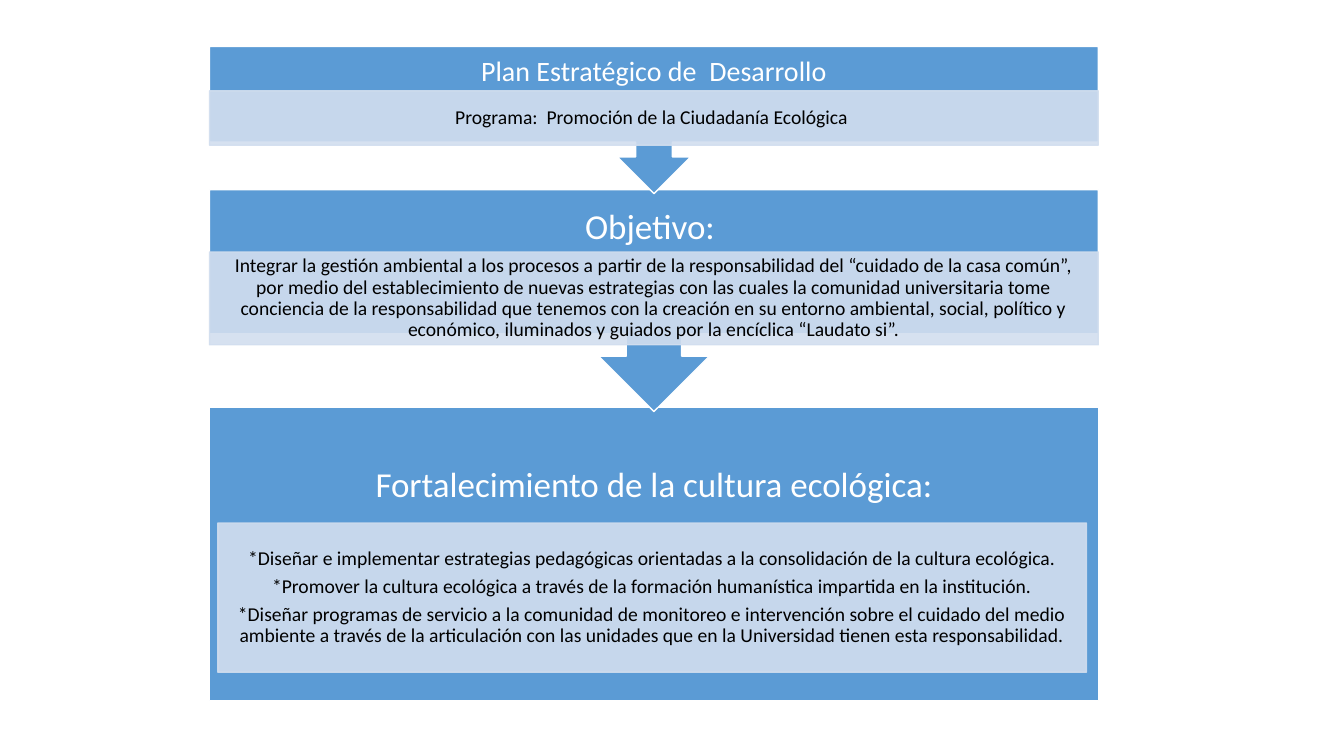
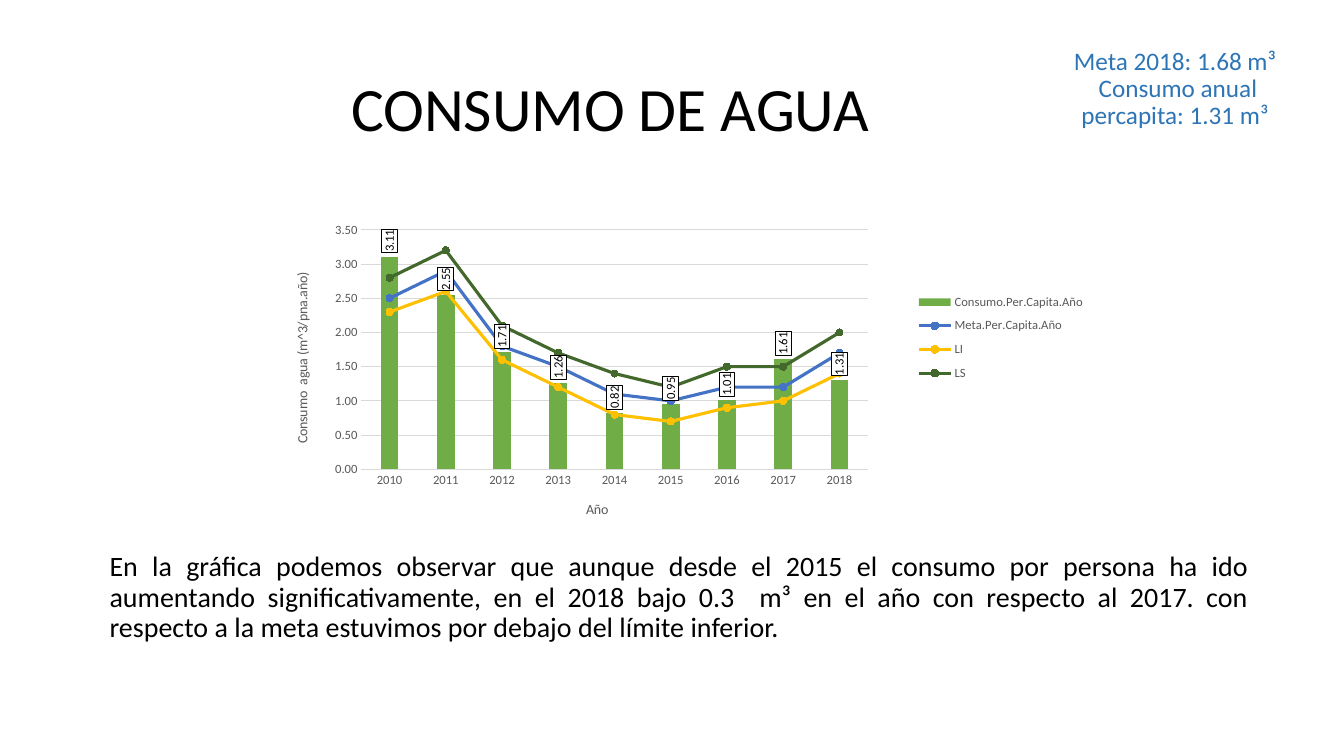
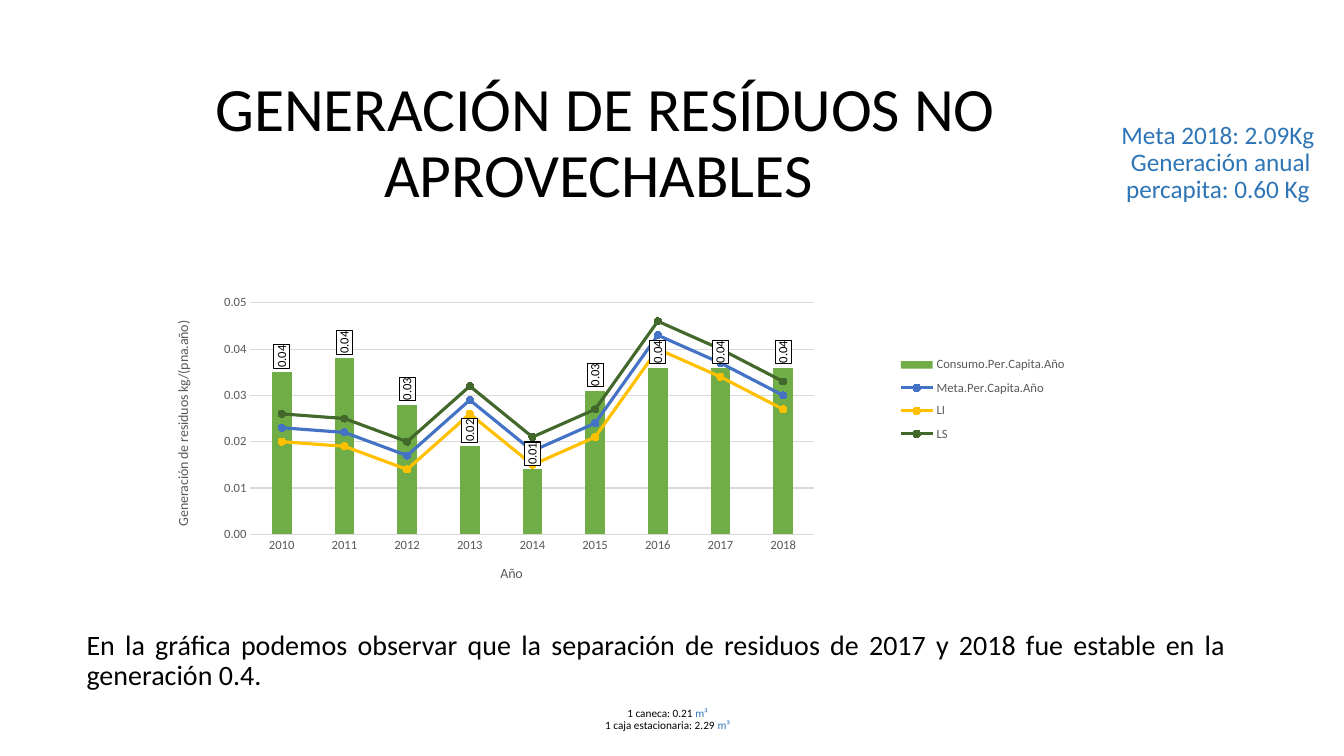
"""Builds three slides on an ecological plan, water use and waste generation."""
from copy import deepcopy

from pptx import Presentation
from pptx.chart.data import CategoryChartData
from pptx.dml.color import RGBColor
from pptx.enum.chart import XL_CHART_TYPE, XL_LABEL_POSITION, XL_LEGEND_POSITION, XL_MARKER_STYLE, XL_TICK_MARK
from pptx.enum.shapes import MSO_SHAPE
from pptx.enum.text import MSO_ANCHOR, MSO_AUTO_SIZE, PP_ALIGN
from pptx.oxml import parse_xml
from pptx.oxml.ns import nsdecls, qn
from pptx.util import Cm, Pt

COLORS = {key: RGBColor.from_string(value) for key, value in {
    "block": "5B9BD5", "band": "D2DEEF", "white": "FFFFFF", "black": "000000",
    "goal": "2E75B6", "axis": "595959", "grid": "D9D9D9", "consumption": "70AD47",
}.items()}
LINE_COLORS = {"Meta.Per.Capita.Año": "4472C4", "LI": "FFC000", "LS": "43682B"}
FONT = "Calibri"
YEARS = [str(year) for year in range(2010, 2019)]


def write(frame, paragraphs, size, color="black", align=PP_ALIGN.CENTER, anchor=MSO_ANCHOR.MIDDLE, gap=0):
    settings = {"word_wrap": True, "auto_size": MSO_AUTO_SIZE.NONE, "vertical_anchor": anchor,
                "margin_left": Cm(0.25), "margin_right": Cm(0.25),
                "margin_top": Cm(0.13), "margin_bottom": Cm(0.13)}
    for name, value in settings.items():
        setattr(frame, name, value)
    for index, words in enumerate(paragraphs):
        paragraph = frame.add_paragraph() if index else frame.paragraphs[0]
        layout = {"alignment": align, "line_spacing": 0.9, "space_before": Pt(gap if index else 0)}
        for name, value in layout.items():
            setattr(paragraph, name, value)
        run = paragraph.add_run()
        run.text = words
        run.font.name, run.font.size = FONT, Pt(size)
        run.font.color.rgb = COLORS[color]


def place(element, index, target="", **position):
    for old in element.findall(qn("c:layout")):
        element.remove(old)
    modes = "".join(f'<c:{key}Mode val="edge"/>' for key in "xy")
    values = "".join(f'<c:{key} val="{value}"/>' for key, value in position.items())
    element.insert(index, parse_xml(
        f'<c:layout {nsdecls("c")}><c:manualLayout>{target}{modes}{values}</c:manualLayout></c:layout>'))


prs = Presentation()
prs.slide_width, prs.slide_height = Cm(33.87), Cm(19.05)

plan = prs.slides.add_slide(prs.slide_layouts[6])
steps = [
    {"shape": MSO_SHAPE.RECTANGLE, "rotation": 0, "block": (10.26, 7.39), "heading_height": 3.99,
     "heading": "Fortalecimiento de la cultura ecológica:", "size": 25,
     "band": (5.49, 13.18, 21.89, 3.76),
     "details": [
         "*Diseñar e implementar estrategias pedagógicas orientadas a la consolidación de la cultura ecológica.",
         "*Promover la cultura ecológica a través de la formación humanística impartida en la institución.",
         "*Diseñar programas de servicio a la comunidad de monitoreo e intervención sobre el cuidado del medio "
         "ambiente a través de la articulación con las unidades que en la Universidad tienen esta "
         "responsabilidad."]},
    {"shape": MSO_SHAPE.UP_ARROW_CALLOUT, "rotation": 180, "block": (4.78, 5.59), "heading_height": 1.96,
     "heading": "Objetivo: ", "size": 25, "band": (5.28, 6.35, 22.4, 2.34),
     "details": [
         "Integrar la gestión ambiental a los procesos a partir de la responsabilidad del “cuidado de la casa "
         "común”, por medio del establecimiento de nuevas estrategias con las cuales la comunidad "
         "universitaria tome conciencia de la responsabilidad que tenemos con la creación en su entorno "
         "ambiental, social, político y económico, iluminados y guiados por la encíclica “Laudato si”."]},
    {"shape": MSO_SHAPE.UP_ARROW_CALLOUT, "rotation": 180, "block": (1.17, 3.71), "heading_height": 1.3,
     "heading": "Plan Estratégico de  Desarrollo", "size": 20, "band": (5.28, 2.29, 22.4, 1.37),
     "details": ["Programa:  Promoción de la Ciudadanía Ecológica "]},
]
for step in steps:
    top, height = step["block"]
    block = plan.shapes.add_shape(step["shape"], Cm(5.28), Cm(top), Cm(22.4), Cm(height))
    block.rotation = step["rotation"]
    heading = plan.shapes.add_textbox(Cm(5.28), Cm(top), Cm(22.4), Cm(step["heading_height"]))
    write(heading.text_frame, [step["heading"]], step["size"], "white")
    band = plan.shapes.add_shape(MSO_SHAPE.RECTANGLE, *map(Cm, step["band"]))
    write(band.text_frame, step["details"], 14, gap=5)
    band.text_frame.margin_top = band.text_frame.margin_bottom = Cm(0.05)
    for part, fill, outline in ((block, "block", "white"), (band, "band", "band")):
        part.shadow.inherit = False
        part.fill.solid()
        part.fill.fore_color.rgb = COLORS[fill]
        part.line.color.rgb = COLORS[outline]
        part.line.width = Pt(1)
    for tint in band._element.spPr.iter(qn("a:srgbClr")):
        tint.append(parse_xml(f'<a:alpha {nsdecls("a")} val="90000"/>'))

reports = [
    {"title": "CONSUMO DE AGUA ", "title_box": (2.51, 1.83, 26.09, 2.26),
     "goal": ["Meta 2018: 1.68 m³ ", "Consumo anual percapita: 1.31 m³ "],
     "goal_box": (26.37, 0.91, 6.63, 2.69),
     "comment": "En la gráfica podemos observar que aunque desde el 2015 el consumo por persona ha ido aumentando "
                "significativamente, en el 2018 bajo 0.3  m³ en el año con respecto al 2017. con respecto a la "
                "meta estuvimos por debajo del límite inferior.",
     "comment_box": (2.51, 13.23, 29.21, 3.68),
     "chart_box": (6.2, 3.58, 22.38, 10.06), "axis_title": "Consumo  agua (m^3/pna.año)",
     "axis_title_top": 0.32, "legend_at": (0.75, 0.36), "maximum": 3.5, "unit": 0.5,
     "series": {
         "Consumo.Per.Capita.Año": [3.11, 2.55, 1.71, 1.26, 0.82, 0.95, 1.01, 1.61, 1.31],
         "Meta.Per.Capita.Año": [2.5, 2.9, 1.8, 1.5, 1.1, 1, 1.2, 1.2, 1.7],
         "LI": [2.3, 2.6, 1.6, 1.2, 0.8, 0.7, 0.9, 1, 1.4],
         "LS": [2.8, 3.2, 2.1, 1.7, 1.4, 1.2, 1.5, 1.5, 2]}},
    {"title": "GENERACIÓN DE RESÍDUOS NO APROVECHABLES ", "title_box": (2.51, 1.83, 25.5, 3.66),
     "goal": ["Meta 2018: 2.09Kg ", "Generación anual percapita: 0.60 Kg "],
     "goal_box": (27.74, 2.26, 6.05, 3.71),
     "comment": "En la gráfica podemos observar que la separación de residuos de 2017 y 2018 fue estable en la "
                "generación 0.4. ",
     "comment_box": (1.93, 14.83, 29.21, 3.68),
     "chart_box": (3.07, 5.49, 24.94, 9.73), "axis_title": "Generación de residuos kg/(pna.año)",
     "axis_title_top": 0.26, "legend_at": (0.77, 0.34), "maximum": 0.05, "unit": 0.01,
     "series": {
         "Consumo.Per.Capita.Año": [0.035, 0.038, 0.028, 0.019, 0.014, 0.031, 0.036, 0.036, 0.036],
         "Meta.Per.Capita.Año": [0.023, 0.022, 0.017, 0.029, 0.018, 0.024, 0.043, 0.037, 0.03],
         "LI": [0.02, 0.019, 0.014, 0.026, 0.015, 0.021, 0.04, 0.034, 0.027],
         "LS": [0.026, 0.025, 0.02, 0.032, 0.021, 0.027, 0.046, 0.04, 0.033]}},
]
for report in reports:
    slide = prs.slides.add_slide(prs.slide_layouts[1])
    title, comment = slide.shapes.title, slide.placeholders[1]
    for holder, box in ((title, "title_box"), (comment, "comment_box")):
        holder.left, holder.top, holder.width, holder.height = map(Cm, report[box])
    write(title.text_frame, [report["title"]], 44, anchor=MSO_ANCHOR.TOP)
    write(comment.text_frame, [report["comment"]], 20, align=PP_ALIGN.JUSTIFY)
    properties = comment.text_frame.paragraphs[0]._p.get_or_add_pPr()
    properties.set("marL", "0")
    properties.set("indent", "0")
    properties.append(parse_xml(f'<a:buNone {nsdecls("a")}/>'))

    data = CategoryChartData(number_format="0.00")
    data.categories = YEARS
    for name, values in report["series"].items():
        data.add_series(name, values)
    chart = slide.shapes.add_chart(
        XL_CHART_TYPE.COLUMN_CLUSTERED, *map(Cm, report["chart_box"]), data).chart
    chart.has_title = False
    chart.has_legend = True
    chart.legend.position = XL_LEGEND_POSITION.RIGHT
    chart.legend.include_in_layout = False

    bars = chart.plots[0]
    bars.gap_width = 219
    bars.vary_by_categories = False
    bar_xml = bars._element
    line_xml = parse_xml(f'<c:lineChart {nsdecls("c")}><c:grouping val="standard"/>'
                         '<c:varyColors val="0"/><c:marker val="1"/></c:lineChart>')
    for series_xml in bar_xml.findall(qn("c:ser"))[1:]:
        for flag in series_xml.findall(qn("c:invertIfNegative")):
            series_xml.remove(flag)
        line_xml.find(qn("c:marker")).addprevious(series_xml)
    for axis_id in bar_xml.findall(qn("c:axId")):
        line_xml.append(deepcopy(axis_id))
    bar_xml.addnext(line_xml)

    consumption = bars.series[0]
    consumption.invert_if_negative = False
    consumption.format.fill.solid()
    consumption.format.fill.fore_color.rgb = COLORS["consumption"]
    labels = consumption.data_labels
    label_format = {"show_value": True, "number_format": "0.00", "number_format_is_linked": False,
                    "position": XL_LABEL_POSITION.OUTSIDE_END}
    for name, value in label_format.items():
        setattr(labels, name, value)
    for limit in chart.plots[1].series:
        color = RGBColor.from_string(LINE_COLORS[limit.name])
        limit.smooth = False
        limit.format.line.color.rgb = color
        limit.format.line.width = Pt(2.25)
        limit.marker.style, limit.marker.size = XL_MARKER_STYLE.CIRCLE, 5
        limit.marker.format.fill.solid()
        limit.marker.format.fill.fore_color.rgb = color
        limit.marker.format.line.color.rgb = color

    years, amounts = chart.category_axis, chart.value_axis
    scale = {"minimum_scale": 0, "maximum_scale": report["maximum"], "major_unit": report["unit"],
             "has_major_gridlines": True}
    for name, value in scale.items():
        setattr(amounts, name, value)
    amounts.tick_labels.number_format = "0.00"
    amounts.tick_labels.number_format_is_linked = False
    amounts.format.line.fill.background()
    for line in (years.format.line, amounts.major_gridlines.format.line):
        line.color.rgb = COLORS["grid"]
        line.width = Pt(0.75)
    axis_titles = ((years, "Año", "0", 0.38, 0.89),
                   (amounts, report["axis_title"], "-5400000", 0.05, report["axis_title_top"]))
    fonts = [(chart.font, 10, "black"), (labels.font, 9, "black"), (chart.legend.font, 9, "axis")]
    for axis, words, turn, x, y in axis_titles:
        axis.major_tick_mark = XL_TICK_MARK.NONE
        frame = axis.axis_title.text_frame
        frame.text = words
        frame._txBody.bodyPr.set("rot", turn)
        frame._txBody.bodyPr.set("vert", "horz")
        place(axis.axis_title._element, 1, x=x, y=y)
        fonts += [(axis.tick_labels.font, 9, "axis"), (frame.paragraphs[0].runs[0].font, 10, "axis")]
    for font, size, color in fonts:
        font.name, font.size, font.bold = FONT, Pt(size), False
        font.color.rgb = COLORS[color]

    label_text = labels._element.find(qn("c:txPr"))
    label_text.find(qn("a:bodyPr")).set("rot", "-5400000")
    label_text.find(qn("a:bodyPr")).set("vert", "horz")
    label_text.addprevious(parse_xml(
        f'<c:spPr {nsdecls("c", "a")}><a:solidFill><a:srgbClr val="{COLORS["white"]}"/></a:solidFill>'
        f'<a:ln w="9525"><a:solidFill><a:srgbClr val="{COLORS["black"]}"/></a:solidFill></a:ln></c:spPr>'))
    legend_x, legend_y = report["legend_at"]
    place(chart.legend._element, 1, x=legend_x, y=legend_y, w=0.2, h=0.26)
    place(bar_xml.getparent(), 0, '<c:layoutTarget val="inner"/>', x=0.13, y=0.22, w=0.57, h=0.6)

    goal = slide.shapes.add_textbox(*map(Cm, report["goal_box"]))
    write(goal.text_frame, report["goal"], 18, "goal")

containers = slide.shapes.add_textbox(Cm(0.97), Cm(17.7), Cm(31.78), Cm(0.9))
write(containers.text_frame, ["1 caneca: 0.21 ", "1 caja estacionaria: 2.29 "], 8, anchor=MSO_ANCHOR.TOP)
for paragraph in containers.text_frame.paragraphs:
    unit = paragraph.add_run()
    unit.text = "m³ "
    unit.font.name, unit.font.size = FONT, Pt(8)
    unit.font.color.rgb = COLORS["goal"]

prs.save("out.pptx")
